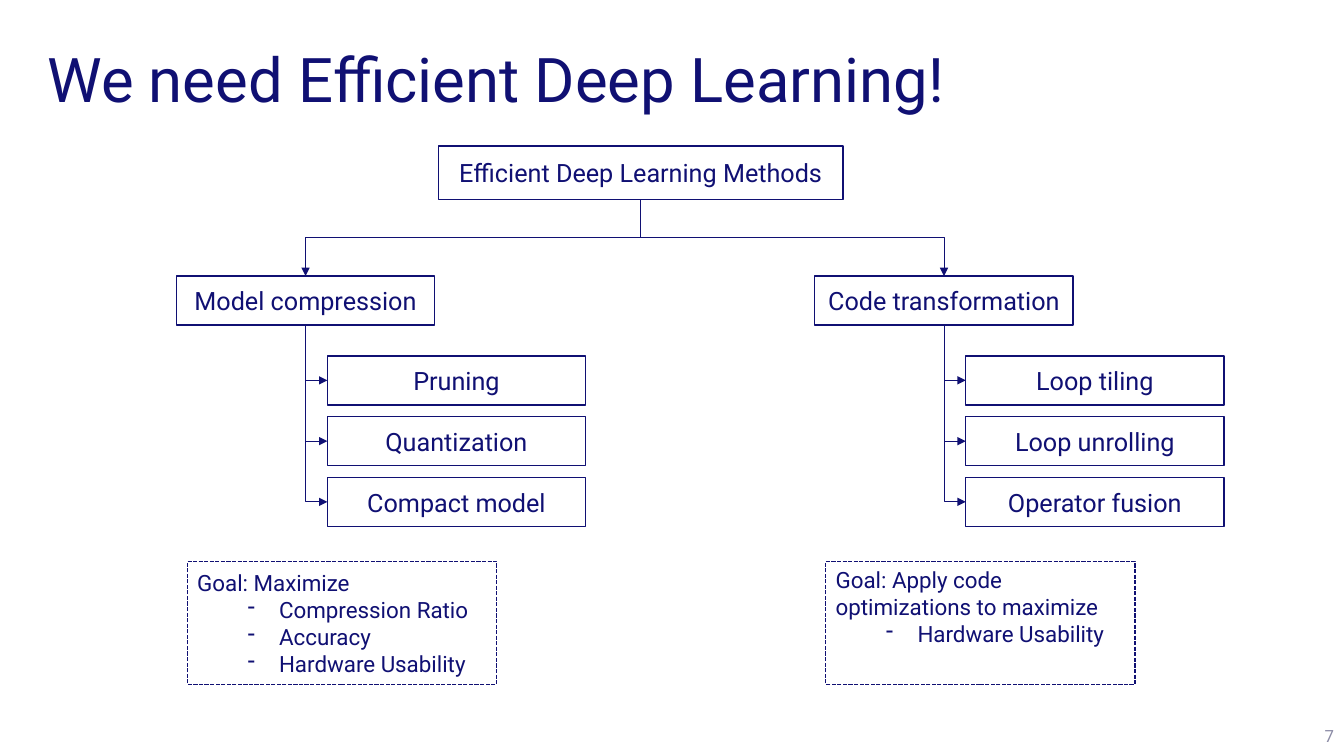
from pptx import Presentation
from pptx.dml.color import RGBColor
from pptx.enum.dml import MSO_LINE
from pptx.enum.shapes import MSO_CONNECTOR, MSO_SHAPE
from pptx.enum.text import MSO_ANCHOR as ANCHOR, MSO_AUTO_SIZE, PP_ALIGN as ALIGN
from pptx.oxml.ns import qn
from pptx.util import Pt
from lxml.etree import SubElement

NAVY = RGBColor(0x10, 0x10, 0x73)
GREY = RGBColor(0x8C, 0x8C, 0xA6)
WHITE = RGBColor(0xFF, 0xFF, 0xFF)
COLUMN_STEP = 456
CHILD_STEP = 43.4


def write(sp, lines, size, color=NAVY, align=ALIGN.CENTER, anchor=ANCHOR.MIDDLE):
    tf = sp.text_frame
    for name, value in {"word_wrap": True, "auto_size": MSO_AUTO_SIZE.NONE,
                        "vertical_anchor": anchor}.items():
        setattr(tf, name, value)
    for i, line in enumerate(lines):
        p = tf.paragraphs[0] if i == 0 else tf.add_paragraph()
        p.alignment = align
        r = p.add_run()
        r.text = line
        for name, value in {"name": "Roboto", "size": Pt(size)}.items():
            setattr(r.font, name, value)
        r.font.color.rgb = color
        if i > 0:
            p.level = 1
            pPr = p._p.get_or_add_pPr()
            pPr.set("marL", str(Pt(58.5)))
            pPr.set("indent", str(Pt(-22.5)))
            SubElement(pPr, qn("a:buChar"), char="-")


def box(x, y, w, h):
    sp = s.shapes.add_shape(MSO_SHAPE.RECTANGLE, Pt(x), Pt(y), Pt(w), Pt(h))
    sp.shadow.inherit = False
    sp.fill.solid()
    sp.fill.fore_color.rgb = WHITE
    sp.line.color.rgb = NAVY
    sp.line.width = Pt(1)
    return sp


prs = Presentation()
prs.slide_width, prs.slide_height = Pt(960), Pt(540)
s = prs.slides.add_slide(prs.slide_layouts[5])

title = s.shapes.title
for name, value in {"left": 26.6, "top": 28.8, "width": 907, "height": 60}.items():
    setattr(title, name, Pt(value))
write(title, ["We need Efficient Deep Learning!"], 44, align=ALIGN.LEFT)
title.text_frame.paragraphs[0].line_spacing = 0.9

number = s.shapes.add_textbox(Pt(911), Pt(511), Pt(49), Pt(29))
write(number, ["7"], 12, GREY, ALIGN.RIGHT)

root = box(313.2, 104.4, 289, 38.2)
write(root, ["Efficient Deep Learning Methods"], 18)

columns = [
    ("Model compression", ["Pruning", "Quantization", "Compact model"],
     ["Goal: Maximize", "Compression Ratio", "Accuracy", "Hardware Usability"],
     ANCHOR.MIDDLE),
    ("Code transformation", ["Loop tiling", "Loop unrolling", "Operator fusion"],
     ["Goal: Apply code optimizations to maximize", "Hardware Usability"],
     ANCHOR.TOP),
]
links = []
for i, (method, techniques, goal, anchor) in enumerate(columns):
    dx = i * COLUMN_STEP
    branch = box(126 + dx, 197.2, 184.5, 35)
    write(branch, [method], 18)
    links.append((root, branch, 0, "bentConnector3"))
    for j, technique in enumerate(techniques):
        child = box(233.8 + dx, 254.2 + j * CHILD_STEP, 184.5, 35)
        write(child, [technique], 18)
        links.append((branch, child, 1, "bentConnector2"))
    goal_box = box(133.8 + dx, 401, 221, 87.8)
    goal_box.line.dash_style = MSO_LINE.SQUARE_DOT
    write(goal_box, goal, 16, align=ALIGN.LEFT, anchor=anchor)

for start, end, side, preset in links:
    x1, y1 = start.left + start.width // 2, start.top + start.height
    x2 = end.left if side == 1 else end.left + end.width // 2
    y2 = end.top + end.height // 2 if side == 1 else end.top
    c = s.shapes.add_connector(MSO_CONNECTOR.ELBOW, x1, y1, x2, y2)
    c.begin_connect(start, 2)
    c.end_connect(end, side)
    w, h = y2 - y1, abs(x2 - x1)
    for name, value in {"left": (x1 + x2 - w) // 2, "top": (y1 + y2 - h) // 2,
                        "width": w, "height": h}.items():
        setattr(c, name, value)
    rightward = x2 > x1
    spPr = c._element.spPr
    for name, value in {"rot": 270 if rightward else 90, "flipH": rightward,
                        "flipV": False}.items():
        setattr(spPr.find(qn("a:xfrm")), name, value)
    spPr.find(qn("a:prstGeom")).set("prst", preset)
    c.line.color.rgb = NAVY
    c.line.width = Pt(0.5)
    SubElement(spPr.find(qn("a:ln")), qn("a:tailEnd"), type="triangle")
    SubElement(spPr, qn("a:effectLst"))

prs.save("out.pptx")
